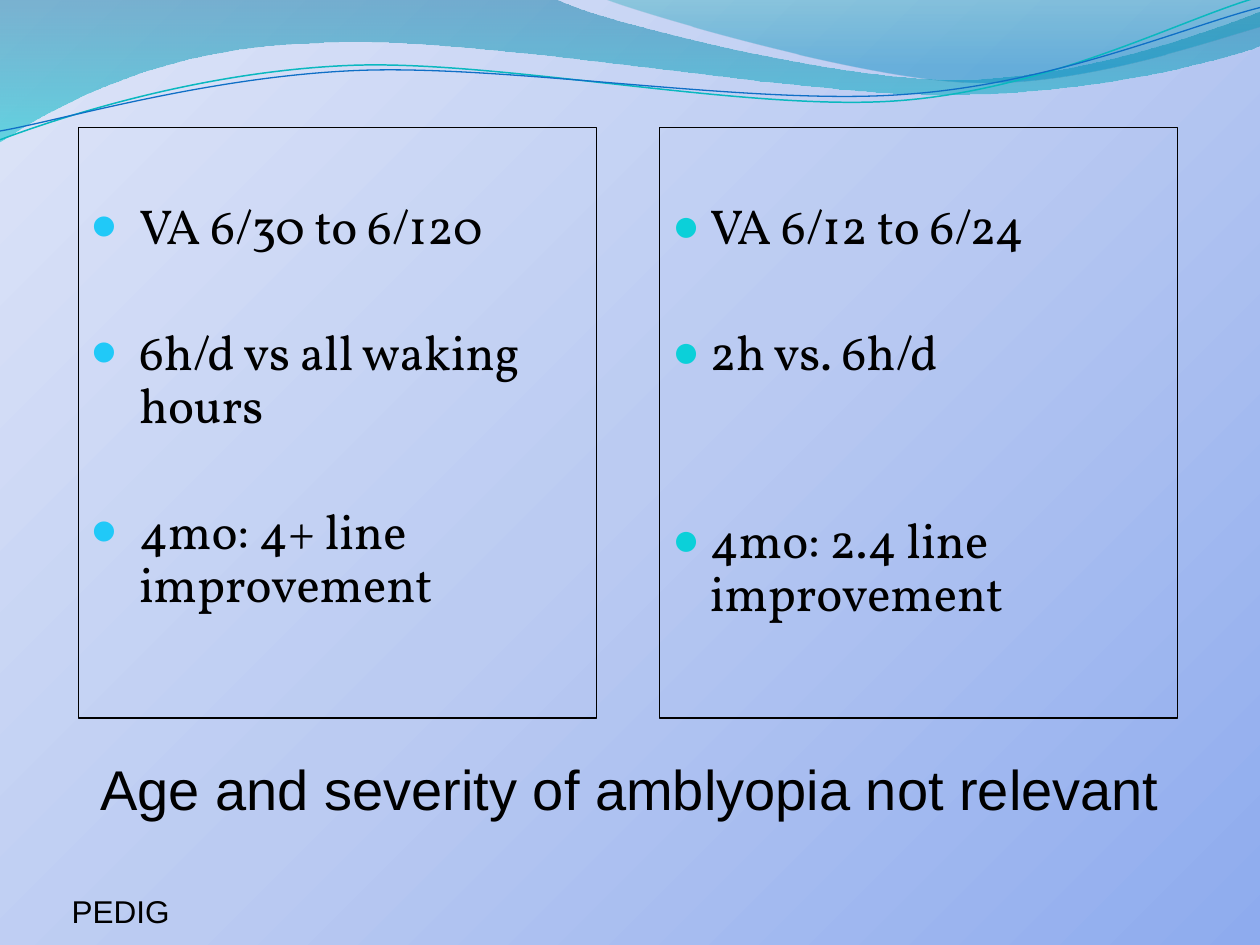
from lxml.etree import SubElement
from pptx import Presentation
from pptx.dml.color import RGBColor
from pptx.enum.shapes import MSO_SHAPE
from pptx.enum.text import MSO_ANCHOR, MSO_AUTO_SIZE, PP_ALIGN
from pptx.oxml.ns import qn
from pptx.util import Inches, Pt

BLACK = RGBColor(0x00, 0x00, 0x00)
SKY = RGBColor(0x20, 0xC9, 0xF8)
AQUA = RGBColor(0x0B, 0xD0, 0xD9)
TEAL = RGBColor(0x0A, 0xB8, 0xBF)
BLUE = RGBColor(0x0F, 0x6F, 0xC6)
DEEP_BLUE = RGBColor(0x00, 0x74, 0xA1)
CYAN = RGBColor(0x00, 0xC6, 0xCF)
SEA = RGBColor(0x00, 0xA1, 0xA9)
LAKE = RGBColor(0x00, 0x8B, 0xBF)
BACK_DARK = RGBColor(0x8E, 0xAB, 0xEE)
BACK_MID = RGBColor(0xBB, 0xCB, 0xF2)
BACK_LIGHT = RGBColor(0xDE, 0xE5, 0xF8)

deck = Presentation()
deck.slide_width, deck.slide_height = Inches(10), Inches(7.5)
W, H = deck.slide_width, deck.slide_height
page = deck.slides.add_slide(deck.slide_layouts[6])


def set_gradient(props, stops, angle):
    """Replace the solid fill in props by (position, colour, opacity) stops."""
    solid = props.find(qn("a:solidFill"))
    grad = props.makeelement(qn("a:gradFill"), {"rotWithShape": "1"})
    props.replace(solid, grad)
    stop_list = SubElement(grad, qn("a:gsLst"))
    for position, colour, opacity in stops:
        stop = SubElement(stop_list, qn("a:gs"), pos=str(position * 1000))
        tint = SubElement(stop, qn("a:srgbClr"), val=str(colour))
        if opacity < 100:
            SubElement(tint, qn("a:alpha"), val=str(opacity * 1000))
    SubElement(grad, qn("a:lin"), ang=str(angle * 60000), scaled="0")


def draw_wave(start, segments, closed):
    """Draw straight (x, y) and cubic (x1, y1, x2, y2, x, y) segments in inches."""
    builder = page.shapes.build_freeform(Inches(start[0]), Inches(start[1]))
    builder.add_line_segments([(Inches(segment[-2]), Inches(segment[-1]))
                               for segment in segments], close=closed)
    wave = builder.convert_to_shape()
    wave.shadow.inherit = False
    # Bend the straight segments that have control points
    straights = list(wave.element.iter(qn("a:lnTo")))
    for straight, segment in zip(straights, segments):
        if len(segment) == 6:
            curve = straight.makeelement(qn("a:cubicBezTo"), {})
            for x, y in zip(segment[::2], segment[1::2]):
                SubElement(curve, qn("a:pt"), x=str(Inches(x) - wave.left),
                           y=str(Inches(y) - wave.top))
            straight.getparent().replace(straight, curve)
    return wave


# Background
page.background.fill.solid()
set_gradient(page.element.find(".//" + qn("p:bgPr")),
             [(0, BACK_DARK, 100), (50, BACK_MID, 100), (100, BACK_LIGHT, 100)], 225)

# Translucent bands along the top
bands = [
    ((0, 0),
     [(4.4, -0.01), (4.76, 0.17, 6.64, 0.63, 7.58, 0.63), (8.53, 0.63, 9.58, 0.26, 10, 0.09),
      (10.01, 0.36), (9.83, 0.44, 8.7, 0.76, 7.46, 0.75), (6.22, 0.75, 3.82, 0.28, 2.57, 0.34),
      (1.29, 0.36, 0.46, 0.83, -0.01, 1.13)],
     [(0, DEEP_BLUE, 45), (100, CYAN, 55)]),
    ((4.79, -0.01),
     [(5.09, 0.11, 6.82, 0.62, 7.69, 0.65), (8.56, 0.69, 9.61, 0.32, 10, 0.21), (10, 0)],
     [(0, SEA, 30), (80, LAKE, 45)]),
]
for start, segments, stops in bands:
    band = draw_wave(start, segments, closed=True)
    band.line.fill.background()
    band.fill.solid()
    set_gradient(band.element.spPr, stops, 90)

# Thin wave lines
wave_lines = [
    ((0, 1.11), [(0.48, 0.93, 1.58, 0.57, 2.77, 0.52), (3.95, 0.47, 5.93, 0.89, 7.13, 0.8),
                 (8.33, 0.71, 9.38, 0.15, 9.98, -0.02)], TEAL, 0.85),
    ((0, 1.04), [(0.47, 0.96, 1.64, 0.61, 2.83, 0.56), (4.03, 0.51, 5.97, 0.84, 7.17, 0.75),
                 (8.36, 0.67, 9.41, 0.21, 10, 0.06)], BLUE, 0.75),
]
for start, segments, colour, weight in wave_lines:
    wave_line = draw_wave(start, segments, closed=False)
    wave_line.fill.background()
    wave_line.line.color.rgb = colour
    wave_line.line.width = Pt(weight)

# Two study panels: left share, indent, bullet, bullet size, colour, (text, space before)
panels = [
    (0.0625, 0.38, "•", 151, SKY,
     [("VA 6/30 to 6/120", 0), ("6h/d vs all waking hours", 41.8),
      ("4mo: 4+ line improvement", 41.8)]),
    (0.5235, 0.3, "●", 95, AQUA,
     [("VA 6/12 to 6/24", 0), ("2h vs. 6h/d", 41.8), ("4mo: 2.4 line improvement", 77.3)]),
]
for left, indent, bullet, bullet_size, bullet_colour, items in panels:
    box = page.shapes.add_shape(MSO_SHAPE.RECTANGLE, int(W * left), int(H * 0.135),
                                int(W * 0.411), int(H * 0.625))
    box.shadow.inherit = False
    box.fill.background()
    box.line.color.rgb = BLACK
    box.line.width = Pt(0.75)
    frame = box.text_frame
    frame.word_wrap = True
    frame.vertical_anchor = MSO_ANCHOR.TOP
    frame.margin_top = Inches(0.59)
    frame.text = "\n".join(text for text, _ in items)
    for para, (_, gap) in zip(frame.paragraphs, items):
        para.alignment = PP_ALIGN.LEFT
        para.line_spacing = 0.9
        para.space_before = Pt(gap)
        span = para.runs[0]
        span.font.name, span.font.size = "Vollkorn", Pt(28)
        span.font.color.rgb = BLACK
        props = para._p.get_or_add_pPr()
        props.set("marL", str(Inches(indent)))
        props.set("indent", str(-Inches(indent)))
        tint = SubElement(props, qn("a:buClr"))
        SubElement(tint, qn("a:srgbClr"), val=str(bullet_colour))
        SubElement(props, qn("a:buSzPct"), val=str(bullet_size * 1000))
        SubElement(props, qn("a:buFont"), typeface="Arial")
        SubElement(props, qn("a:buChar"), char=bullet)

# Conclusion and source
captions = [
    ("Age and severity of amblyopia not relevant", 32, 0.07, 0.792, 0.867, 0.085),
    ("PEDIG", 18, 0.047, 0.937, 0.099, 0.053),
]
for text, size, left, top, width, height in captions:
    box = page.shapes.add_textbox(int(W * left), int(H * top), int(W * width), int(H * height))
    frame = box.text_frame
    frame.word_wrap = False
    frame.auto_size = MSO_AUTO_SIZE.SHAPE_TO_FIT_TEXT
    frame.text = text
    span = frame.paragraphs[0].runs[0]
    span.font.name, span.font.size = "Arial", Pt(size)
    span.font.color.rgb = BLACK

deck.save("out.pptx")
